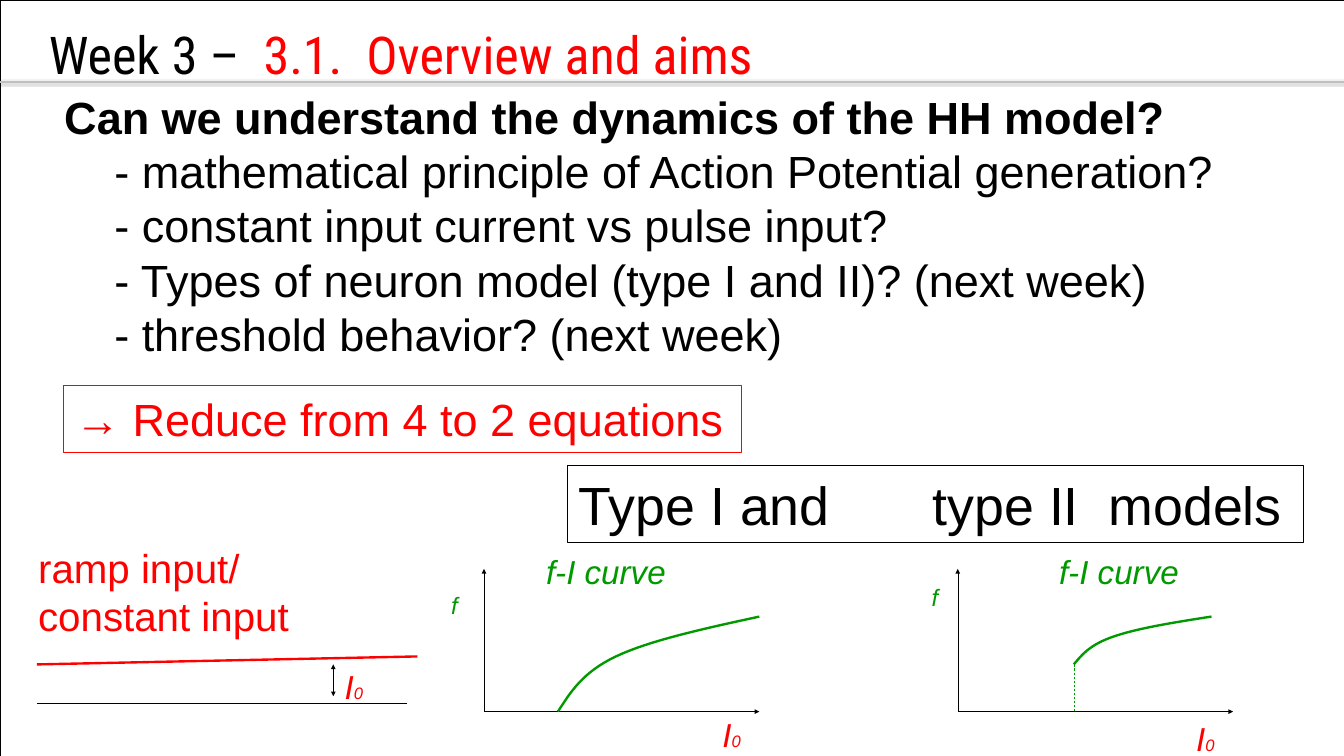
from lxml import etree
from pptx import Presentation
from pptx import util as u
from pptx.dml.color import RGBColor
from pptx.enum import dml, shapes, text
from pptx.oxml import parse_xml
from pptx.oxml.ns import nsdecls, qn

BLACK, RED, GREEN, GREY = "000000", "FF0000", "009900", "BFBFBF"
SMOOTHNESS = 16  # straight pieces per Bezier segment

presentation = Presentation()
presentation.slide_width = u.Inches(23.63)
presentation.slide_height = u.Inches(13.29)
slide = presentation.slides.add_slide(presentation.slide_layouts[6])


def add_text(paragraphs, left, top, width, height, size=42, color=BLACK, font="Arial",
             italic=False, outline=None, inset=(0.21, 0.11), wrap=False):
    """Each paragraph is a list of (text, run overrides); return the shape."""
    box = left, top, width, height
    if outline:
        shape = slide.shapes.add_shape(shapes.MSO_SHAPE.RECTANGLE, *map(u.Inches, box))
        shape.shadow.inherit = False
        shape.fill.background()
        style_line(shape, outline)
    else:
        shape = slide.shapes.add_textbox(*map(u.Inches, box))
    frame = shape.text_frame
    frame.word_wrap = wrap
    frame.vertical_anchor = text.MSO_ANCHOR.TOP
    frame.margin_left = frame.margin_right = u.Inches(inset[0])
    frame.margin_top = frame.margin_bottom = u.Inches(inset[1])
    for index, runs in enumerate(paragraphs):
        paragraph = frame.add_paragraph() if index else frame.paragraphs[0]
        paragraph.alignment = text.PP_ALIGN.LEFT
        for words, override in runs:
            run = paragraph.add_run()
            run.text = words
            run.font.name = font
            run.font.size = u.Pt(override.get("size", size))
            run.font.bold = override.get("bold", False)
            run.font.italic = italic
            run.font.color.rgb = RGBColor.from_string(override.get("color", color))
    return shape


def style_line(shape, color, width=0.75, dashed=False, arrows=()):
    """Format an outline; arrows names the ends: headEnd, tailEnd."""
    shape.line.color.rgb = RGBColor.from_string(color)
    shape.line.width = u.Pt(width)
    if dashed:
        shape.line.dash_style = dml.MSO_LINE.DASH
    for end in arrows:
        etree.SubElement(shape.line._get_or_add_ln(), qn(f"a:{end}"), type="triangle")


# Slide frame
slide_frame = slide.shapes.add_shape(
    shapes.MSO_SHAPE.RECTANGLE, 0, 0, presentation.slide_width, presentation.slide_height)
slide_frame.shadow.inherit = False
slide_frame.fill.background()
style_line(slide_frame, BLACK)

# Title, questions and boxed statements
add_text([[("Week 3 –  ", {}), ("3.1.  Overview and aims", {"color": RED})]],
         0.76, 0.35, 22.81, 1.61, size=66, font="Roboto Condensed",
         inset=(0.1, 0.05), wrap=True)

questions = add_text([
    [("Can we understand the dynamics of the HH model?", {"bold": True})],
    [("- mathematical principle of Action Potential generation?", {})],
    [("- constant input current vs pulse input?", {})],
    [("- Types of neuron model (type I and II)? (next week)", {})],
    [("- threshold behavior? (next week)", {})],
], 0.92, 1.47, 20.84, 5.01, size=57, wrap=True)
for paragraph in questions.text_frame.paragraphs[1:]:
    paragraph._p.get_or_add_pPr().set("marL", str(u.Inches(0.88)))

add_text([[("→ Reduce from 4 to 2 equations", {})]],
         1.11, 6.78, 11.93, 1.17, size=57, color=RED, outline=RED)

model_types = add_text([[("Type I and\ttype II  models", {})]],
                       9.97, 8.18, 12.94, 1.36, size=68, outline=BLACK, wrap=True)
tab_stops = etree.SubElement(
    model_types.text_frame.paragraphs[0]._p.get_or_add_pPr(), qn("a:tabLst"))
etree.SubElement(tab_stops, qn("a:tab"), pos=str(u.Inches(6.22)), algn="l")

# Labels of the ramp and of the two plots
add_text([[("ramp input/", {})], [("constant input", {})]],
         0.46, 9.44, 4.88, 1.93, size=51, color=RED)
for left, top in [(5.85, 11.61), (12.49, 12.44), (20.82, 12.51)]:
    add_text([[("I", {}), ("0", {"size": 21})]], left, top, 0.75, 0.92,
             color=RED, italic=True)
for left, top in [(7.72, 10.28), (16.17, 10.14)]:
    add_text([[("f", {})]], left, top, 0.54, 0.72, size=30, color=GREEN, italic=True)
for left in (9.39, 18.41):
    add_text([[("f-I curve", {})]], left, 9.58, 2.55, 0.92, color=GREEN, italic=True)

# Straight lines: start, end, format
arrow = {"color": BLACK, "arrows": ["tailEnd"]}
lines = [
    ((0.65, 12.37), (7.16, 12.37), {"color": BLACK}),
    ((0.65, 11.68), (7.34, 11.54), {"color": RED, "width": 3}),
    ((5.86, 11.68), (5.86, 12.24), {"color": BLACK, "arrows": ["headEnd", "tailEnd"]}),
    ((18.89, 11.68), (18.89, 12.51), {"color": GREEN, "dashed": True}),
]
for axis_left in (8.51, 16.84):
    origin = axis_left, 12.51
    lines.append((origin, (axis_left, 10), arrow))
    lines.append((origin, (axis_left + 4.84, 12.51), arrow))
lines.append(((-0.24, 1.44), (24.32, 1.44), {"color": GREY, "width": 2}))

for start, end, line_format in lines:
    connector = slide.shapes.add_connector(
        shapes.MSO_CONNECTOR.STRAIGHT, *map(u.Inches, start + end))
    style_line(connector, **line_format)
    effects = etree.SubElement(connector._element.spPr, qn("a:effectLst"))

# The title rule, drawn last, keeps a soft shadow
effects.append(parse_xml(
    f'<a:outerShdw {nsdecls("a")} blurRad="{u.Pt(3.1)}" dist="{u.Pt(1.6)}" dir="5400000">'
    f'<a:srgbClr val="{BLACK}"><a:alpha val="38000"/></a:srgbClr></a:outerShdw>'))

# f-I curves: a start point, then two controls and an end per Bezier segment
curves = [
    [(9.81, 12.51), (10.03, 12.17), (10.24, 11.82), (10.83, 11.54),
     (11.42, 11.26), (12.38, 11.05), (13.35, 10.84)],
    [(18.88, 11.68), (19.03, 11.5), (19.17, 11.33), (19.58, 11.19),
     (19.98, 11.05), (20.64, 10.94), (21.3, 10.84)],
]
for nodes in curves:
    points = []
    for first in range(0, len(nodes) - 1, 3):
        for step in range(1, SMOOTHNESS + 1):
            t = step / SMOOTHNESS
            weights = (1 - t) ** 3, 3 * t * (1 - t) ** 2, 3 * t * t * (1 - t), t ** 3
            segment = zip(*nodes[first:first + 4])
            points.append([u.Inches(sum(w * c for w, c in zip(weights, axis)))
                           for axis in segment])
    builder = slide.shapes.build_freeform(*map(u.Inches, nodes[0]))
    builder.add_line_segments(points, close=False)
    curve = builder.convert_to_shape()
    curve.shadow.inherit = False
    curve.fill.background()
    style_line(curve, GREEN, width=3)

presentation.save("out.pptx")
